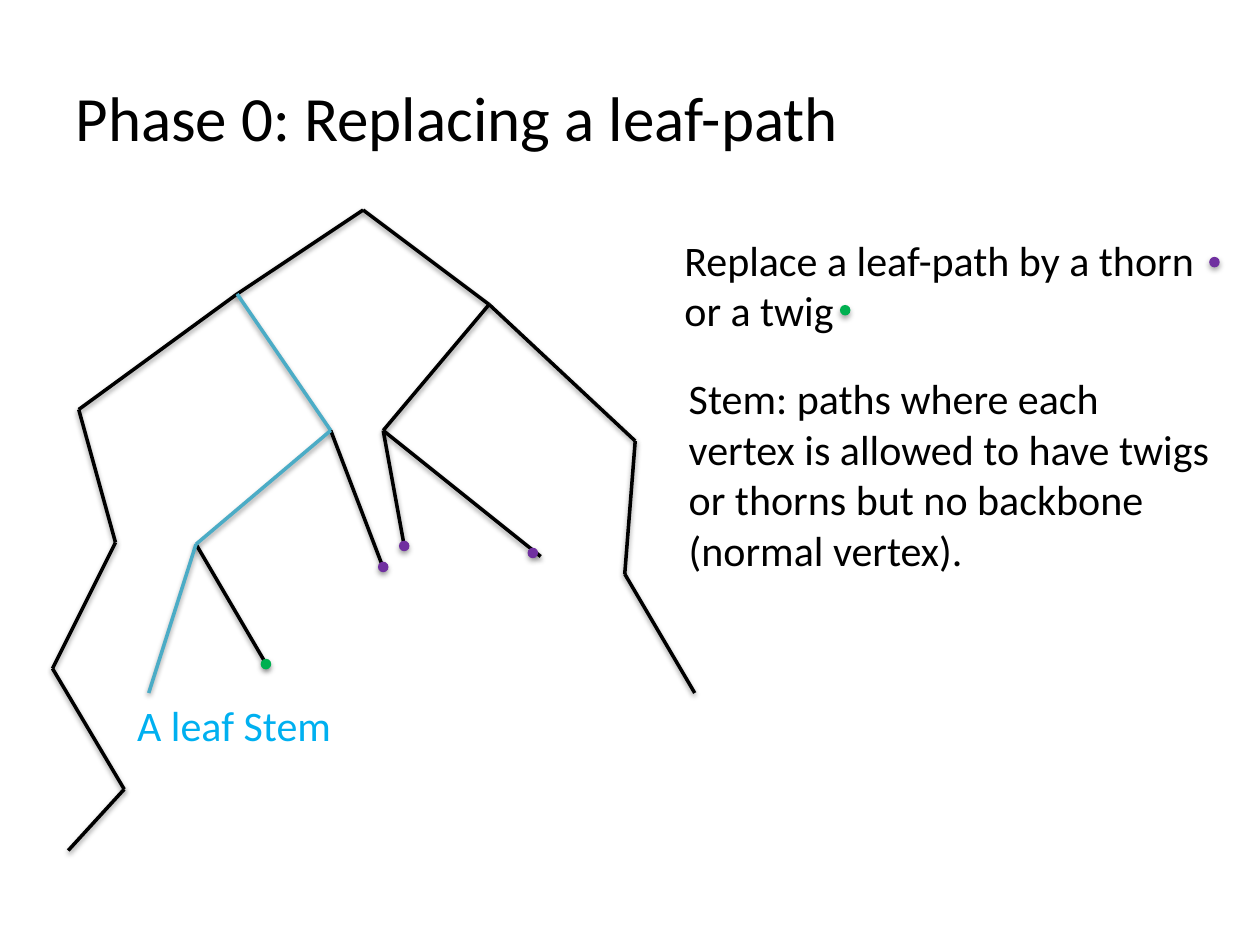
from pptx import Presentation
from pptx.dml.color import RGBColor
from pptx.enum import shapes, text
from pptx.oxml import parse_xml
from pptx.oxml.ns import nsdecls
from pptx.util import Pt

BLACK = RGBColor(0x00, 0x00, 0x00)
TEAL = RGBColor(0x4B, 0xAC, 0xC6)
PURPLE = RGBColor(0x70, 0x30, 0xA0)
GREEN = RGBColor(0x00, 0xB0, 0x50)
SKY = RGBColor(0x00, 0xB0, 0xF0)
DOT = 6

NODES = {
    "root": (179.5, 0), "left": (107.5, 48), "right": (251.5, 54),
    "left_out": (17, 114), "stem_mid": (161, 126), "inner": (191, 126),
    "right_out": (335, 132), "stem_low": (84, 191), "stem_leaf": (57, 276),
    "thorn_a": (191, 204.5), "thorn_b": (203, 192), "thorn_c": (281, 198),
    "right_low": (329, 208), "right_leaf": (369, 276), "twig": (125, 261),
    "zig_1": (38, 190), "zig_2": (2, 262), "zig_3": (43, 331), "zig_4": (11, 366),
}
PATHS = [
    (BLACK, "root left left_out zig_1 zig_2 zig_3 zig_4"),
    (BLACK, "root right right_out right_low right_leaf"),
    (BLACK, "right inner thorn_b"),
    (BLACK, "inner thorn_c"),
    (BLACK, "stem_mid thorn_a"),
    (BLACK, "stem_low twig"),
    (TEAL, "left stem_mid stem_low stem_leaf"),
]
TREE_DOTS = [(203, 192, PURPLE), (191, 204, PURPLE), (276.5, 196, PURPLE), (124, 259.5, GREEN)]


def add_shadow(sp, dist, alpha):
    """Give a shape or connector a soft shadow straight below it."""
    sp._element.spPr.append(parse_xml(
        f'<a:effectLst {nsdecls("a")}><a:outerShdw blurRad="{Pt(3.1)}" dist="{Pt(dist)}" '
        f'dir="5400000" rotWithShape="0"><a:srgbClr val="000000">'
        f'<a:alpha val="{alpha * 1000}"/></a:srgbClr></a:outerShdw></a:effectLst>'))


def add_edge(s, start, end, color):
    """Draw one tree edge between two points."""
    ln = s.shapes.add_connector(shapes.MSO_CONNECTOR.STRAIGHT, *map(Pt, start + end))
    ln.line.color.rgb = color
    ln.line.width = Pt(2)
    add_shadow(ln, 1.6, 38)


def add_dots(s, x, y, dots):
    """Draw dots centred on points relative to (x, y)."""
    for dx, dy, color in dots:
        sp = s.shapes.add_shape(shapes.MSO_SHAPE.FLOWCHART_CONNECTOR,
                                Pt(x + dx - DOT / 2), Pt(y + dy - DOT / 2), Pt(DOT), Pt(DOT))
        sp.fill.solid()
        sp.fill.fore_color.rgb = color
        sp.line.fill.background()
        add_shadow(sp, 1.8, 35)


def format_text(tf, size, color):
    """Left-align the text and set its font."""
    p = tf.paragraphs[0]
    p.alignment = text.PP_ALIGN.LEFT
    for name, value in {"size": Pt(size), "name": "Calibri"}.items():
        setattr(p.font, name, value)
    p.font.color.rgb = color


def add_title(s, x, y, w, h):
    """Place and format the title placeholder."""
    sp = s.shapes.title
    for name, value in {"left": x, "top": y, "width": w, "height": h}.items():
        setattr(sp, name, Pt(value))
    tf = sp.text_frame
    tf.text = "Phase 0: Replacing a leaf-path"
    tf.vertical_anchor = text.MSO_ANCHOR.MIDDLE
    format_text(tf, 36, BLACK)


def add_tree(s, x, y):
    """Draw the tree with its leaf stem, thorns and twig."""
    for color, path in PATHS:
        points = [(x + NODES[n][0], y + NODES[n][1]) for n in path.split()]
        for start, end in zip(points, points[1:]):
            add_edge(s, start, end, color)
    add_dots(s, x, y, TREE_DOTS)


def add_note(s, x, y, w, h, words, color=BLACK, dots=()):
    """Add a wrapped note with optional dots beside its words."""
    tf = s.shapes.add_textbox(Pt(x), Pt(y), Pt(w), Pt(h)).text_frame
    tf.word_wrap = True
    tf.auto_size = text.MSO_AUTO_SIZE.SHAPE_TO_FIT_TEXT
    tf.text = words
    format_text(tf, 24, color)
    add_dots(s, x, y, dots)


def main():
    """Build and save the slide."""
    prs = Presentation()
    prs.slide_width, prs.slide_height = Pt(720), Pt(540)
    s = prs.slides.add_slide(prs.slide_layouts[5])
    add_title(s, 36, 21.6, 648, 90)
    add_tree(s, 28, 120)
    add_note(s, 384, 130.3, 313, 65.5, "Replace a leaf-path by a thorn or a twig",
             dots=[(99, 47, GREEN), (310, 19.5, PURPLE)])
    add_note(s, 386.5, 209.5, 313, 124,
             "Stem: paths where each vertex is allowed to have twigs or thorns "
             "but no backbone (normal vertex).")
    add_note(s, 71.3, 396, 127.5, 36, "A leaf Stem", SKY)
    prs.save("out.pptx")


if __name__ == "__main__":
    main()
